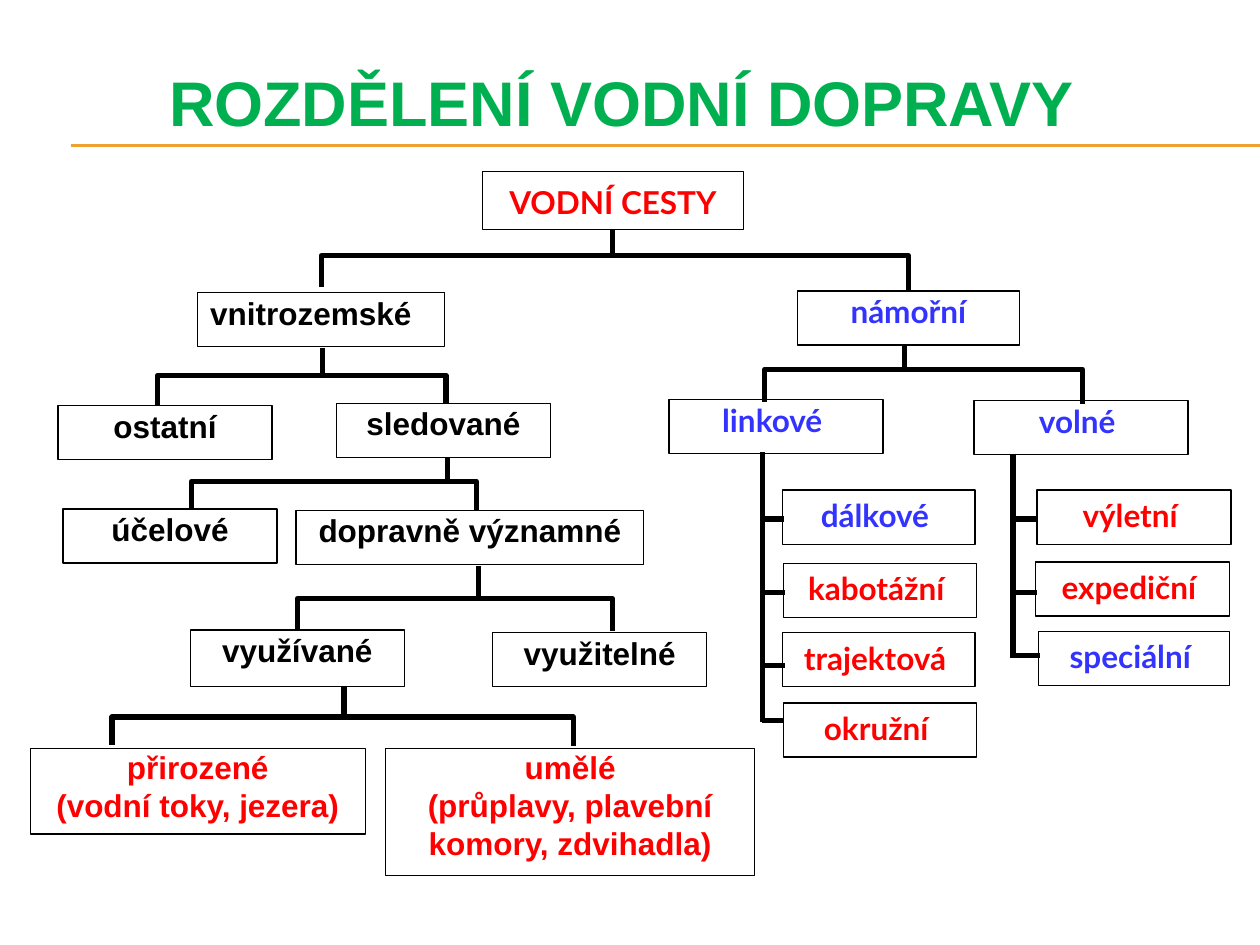
"""Build a one-slide tree chart of the types of water transport."""
from dataclasses import dataclass

from lxml import etree
from pptx import Presentation
from pptx import util as u
from pptx.dml.color import RGBColor
from pptx.enum import shapes, text
from pptx.oxml.ns import qn

PX = u.Inches(1) // 100
COLORS = {
    "white": "FFFFFF",
    "black": "000000",
    "red": "FF0000",
    "blue": "3333FF",
    "green": "00B050",
    "amber": "F0A22E",
}


@dataclass
class Node:
    label: str
    left: int
    top: int
    width: int
    color: str
    height: int = 43
    font: str = "Arial"
    inset_top: int = 1
    inset_bottom: int = 1
    centred: bool = True


@dataclass
class Fork:
    """A stem above a bar with two legs."""
    stem: int
    stem_top: int
    bar: int
    left: int
    left_foot: int
    right: int
    right_foot: int


@dataclass
class Spine:
    """A vertical line with branches to its right."""
    x: int
    top: int
    bottom: int
    branches: tuple[tuple[int, int, int], ...]


def lato(label: str, left: int, top: int, width: int, color: str,
         inset_top: int = 1, height: int = 43) -> Node:
    return Node(label, left, top, width, color, height, "Lato", inset_top)


def rgb(name: str) -> RGBColor:
    return RGBColor.from_string(COLORS[name])


def style_line(line, color: str, points: float) -> None:
    line.color.rgb = rgb(color)
    line.width = u.Pt(points)


def style_font(font, face: str, size: int, color: str) -> None:
    font.name = face
    font.size = u.Pt(size)
    font.bold = True
    font.color.rgb = rgb(color)


def draw_line(slide, x1: int, y1: int, x2: int, y2: int,
              color: str = "black", points: float = 3) -> None:
    line = slide.shapes.add_connector(
        shapes.MSO_CONNECTOR.STRAIGHT, x1 * PX, y1 * PX, x2 * PX, y2 * PX)
    style_line(line.line, color, points)
    etree.SubElement(line._element.spPr, qn("a:effectLst"))


def draw_node(slide, node: Node) -> None:
    box = slide.shapes.add_shape(
        shapes.MSO_SHAPE.RECTANGLE,
        node.left * PX, node.top * PX, node.width * PX, node.height * PX)
    box.shadow.inherit = False
    box.fill.solid()
    box.fill.fore_color.rgb = rgb("white")
    style_line(box.line, "black", 0.75)
    frame = box.text_frame
    frame.word_wrap = True
    frame.vertical_anchor = text.MSO_ANCHOR.TOP
    frame.margin_left = frame.margin_right = 10 * PX
    frame.margin_top = node.inset_top * PX
    frame.margin_bottom = node.inset_bottom * PX
    frame.text = node.label
    for paragraph in frame.paragraphs:
        paragraph.alignment = (
            text.PP_ALIGN.CENTER if node.centred else text.PP_ALIGN.LEFT)
        style_font(paragraph.font, node.font, 18, node.color)


def draw_fork(slide, fork: Fork) -> None:
    builder = slide.shapes.build_freeform(fork.left, fork.left_foot, scale=PX)
    builder.add_line_segments(
        [(fork.left, fork.bar), (fork.right, fork.bar),
         (fork.right, fork.right_foot)], close=False)
    bracket = builder.convert_to_shape()
    bracket.shadow.inherit = False
    bracket.fill.background()
    style_line(bracket.line, "black", 3)
    draw_line(slide, fork.stem, fork.stem_top, fork.stem, fork.bar)


def draw_spine(slide, spine: Spine) -> None:
    draw_line(slide, spine.x, spine.top, spine.x, spine.bottom)
    for start, end, y in spine.branches:
        draw_line(slide, start, y, end, y)


def draw_title(slide, label: str) -> None:
    title = slide.shapes.title
    title.left, title.top = 50 * PX, 42 * PX
    title.width, title.height = 900 * PX, 76 * PX
    frame = title.text_frame
    frame.text = label
    frame.auto_size = text.MSO_AUTO_SIZE.NONE
    frame.vertical_anchor = text.MSO_ANCHOR.MIDDLE
    heading = frame.paragraphs[0]
    heading.alignment = text.PP_ALIGN.CENTER
    style_font(heading.font, "Arial", 36, "green")


INLAND_FORKS = [
    Fork(486, 182, 203, 255, 228, 721, 230),
    Fork(256, 276, 298, 125, 323, 354, 324),
    Fork(355, 361, 382, 152, 411, 378, 413),
    Fork(380, 449, 475, 236, 500, 486, 501),
    Fork(273, 545, 569, 89, 591, 455, 592),
]
SEA_FORK = Fork(718, 273, 293, 607, 319, 859, 321)

NODES = [
    lato("VODNÍ CESTY", 383, 136, 207, "red", 9, 46),
    Node("vnitrozemské", 157, 232, 196, "black", centred=False),
    Node("ostatní", 46, 322, 170, "black"),
    Node("sledované", 267, 320, 170, "black"),
    Node("účelové", 50, 404, 170, "black"),
    Node("dopravně významné", 235, 405, 276, "black"),
    Node("využívané", 151, 500, 170, "black", 45),
    Node("využitelné", 391, 502, 170, "black"),
    Node("přirozené\n(vodní toky, jezera)", 24, 594, 266, "red", 68,
         inset_top=0, inset_bottom=0),
    Node("umělé\n(průplavy, plavební komory, zdvihadla)", 306, 594, 293,
         "red", 101, inset_top=0, inset_bottom=0),
    lato("námořní", 633, 231, 176, "blue"),
    lato("linkové ", 531, 317, 170, "blue"),
    lato("volné ", 773, 318, 170, "blue"),
    lato("dálkové ", 621, 389, 153, "blue", 5),
    lato("kabotážní ", 622, 447, 153, "red", 5),
    lato("trajektová ", 621, 502, 153, "red", 5),
    lato("okružní ", 622, 558, 153, "red", 5),
    lato("výletní ", 823, 389, 154, "red", 5),
    lato("expediční ", 822, 446, 154, "red", 5),
    lato("speciální ", 824, 501, 152, "blue", 5),
]

SPINES = [
    Spine(605, 359, 573, ((605, 622, 412), (605, 623, 470),
                          (606, 623, 528), (605, 622, 572))),
    Spine(804, 360, 522, ((804, 824, 412), (803, 823, 470),
                          (806, 825, 520))),
]


def main() -> None:
    deck = Presentation()
    deck.slide_width, deck.slide_height = 1000 * PX, 750 * PX
    slide = deck.slides.add_slide(deck.slide_layouts[5])
    for y in (115, 116):
        draw_line(slide, 56, y, 1000, y, "amber", 0.75)
    draw_title(slide, "ROZDĚLENÍ VODNÍ DOPRAVY ")
    for fork in INLAND_FORKS:
        draw_fork(slide, fork)
    for node in NODES:
        draw_node(slide, node)
    draw_fork(slide, SEA_FORK)
    for spine in SPINES:
        draw_spine(slide, spine)
    deck.save("out.pptx")


if __name__ == "__main__":
    main()
